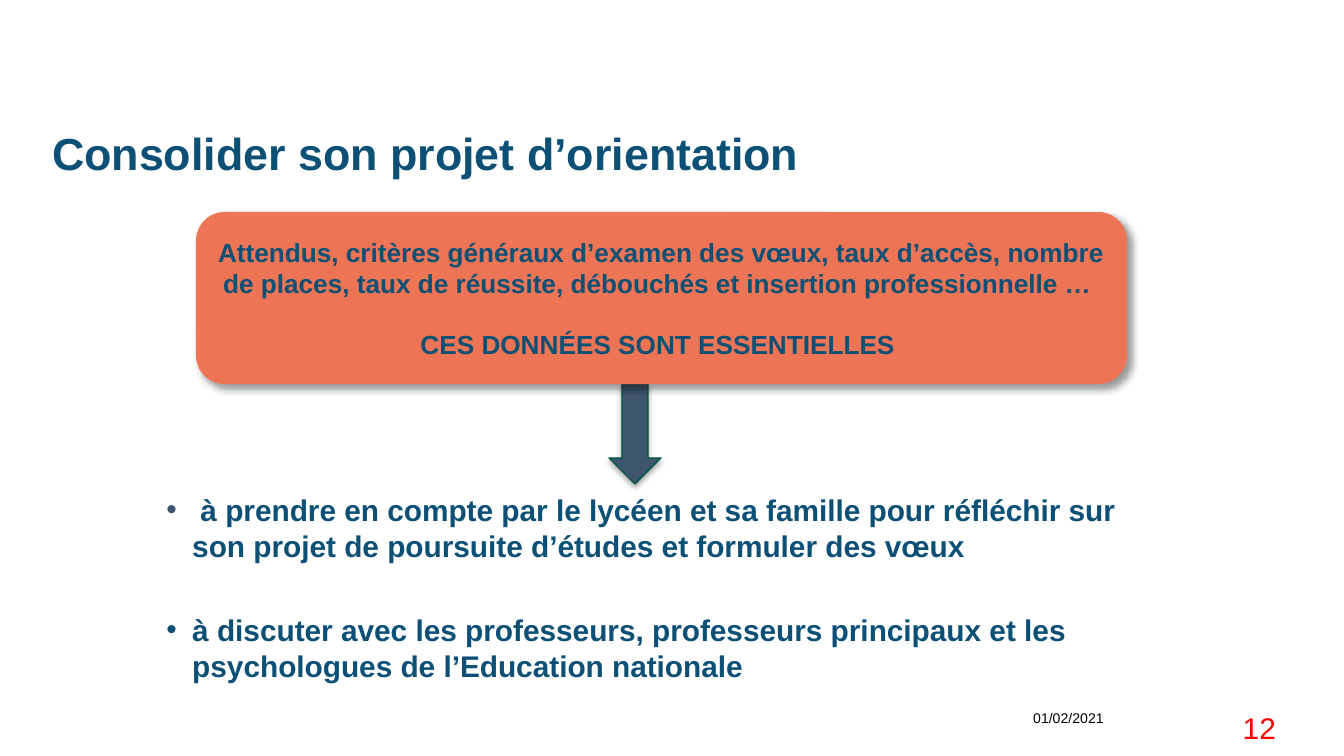
from dataclasses import dataclass

from lxml import etree
from pptx import Presentation, util as u
from pptx.dml.color import RGBColor
from pptx.enum import shapes, text
from pptx.oxml import ns

PX = 914400 / 134.4


@dataclass(frozen=True)
class Theme:
    font: str = "Arial"
    navy: str = "0C5076"
    slate: str = "3D566E"
    green: str = "005640"
    coral: str = "ED7454"
    black: str = "000000"
    red: str = "FF0000"
    title: float = 24
    body: float = 16
    panel: float = 14
    date: float = 7.5


theme = Theme()


def style(font, size, color, bold=False):
    font.name = theme.font
    font.size = u.Pt(size)
    font.bold = bold
    font.color.rgb = RGBColor.from_string(color)


def add_shadow(shape, opacity, blur, distance, degrees):
    shape.shadow.inherit = False
    effects = shape._element.spPr.find(ns.qn("a:effectLst"))
    shadow = etree.SubElement(
        effects, ns.qn("a:outerShdw"), blurRad=str(u.Pt(blur)),
        dist=str(u.Pt(distance)), dir=str(degrees * 60000),
        algn="ctr", rotWithShape="0")
    color = etree.SubElement(shadow, ns.qn("a:srgbClr"), val=theme.black)
    etree.SubElement(color, ns.qn("a:alpha"), val=str(opacity * 1000))


deck = Presentation()
deck.slide_width, deck.slide_height = round(1344 * PX), round(756 * PX)
page = deck.slides.add_slide(deck.slide_layouts[5])

title = page.shapes.title
title.left, title.top, title.width, title.height = [
    round(n * PX) for n in (52, 132, 1238, 106)]
frame = title.text_frame
frame.margin_left = frame.margin_top = frame.margin_right = frame.margin_bottom = 0
frame.vertical_anchor = text.MSO_ANCHOR.TOP
frame.auto_size = text.MSO_AUTO_SIZE.NONE
frame.word_wrap = True
para = frame.paragraphs[0]
para.text = "Consolider son projet d’orientation"
para.alignment = text.PP_ALIGN.LEFT
para.line_spacing = 0.9
style(para.font, theme.title, theme.navy, True)

for left, label, size, color in (
    (945, "01/02/2021", theme.date, theme.black),
    (1117, "12", theme.body, theme.red),
):
    box = page.shapes.add_textbox(*[round(n * PX) for n in (left, 703, 172, 52)])
    box.text_frame.word_wrap = True
    para = box.text_frame.paragraphs[0]
    para.text = label
    para.alignment = text.PP_ALIGN.RIGHT
    style(para.font, size, color)

advice = page.shapes.add_textbox(*[round(n * PX) for n in (153, 485, 1005, 210)])
frame = advice.text_frame
frame.word_wrap = True
for index, (lead, sentence) in enumerate((
    (" ", "à prendre en compte par le lycéen et sa famille pour réfléchir sur "
          "son projet de poursuite d’études et formuler des vœux"),
    ("", "à discuter avec les professeurs, professeurs principaux et les "
         "psychologues de l’Education nationale"),
)):
    para = frame.add_paragraph() if index else frame.paragraphs[0]
    props = para._p.get_or_add_pPr()
    props.set("marL", str(round(26 * PX)))
    props.set("indent", str(round(-26 * PX)))
    etree.SubElement(props, ns.qn("a:buFont"), typeface=theme.font)
    etree.SubElement(props, ns.qn("a:buChar"), char="•")
    if index:
        para.space_before = u.Pt(26)
    style(para.font, theme.body, theme.navy, True)
    if lead:
        span = para.add_run()
        span.text = lead
        style(span.font, theme.body, theme.slate)
    para.add_run().text = sentence

arrow = page.shapes.add_shape(
    shapes.MSO_SHAPE.DOWN_ARROW, *[round(n * PX) for n in (609, 383, 52, 101)])
arrow.fill.solid()
arrow.fill.fore_color.rgb = RGBColor.from_string(theme.slate)
arrow.line.color.rgb = RGBColor.from_string(theme.green)
arrow.line.width = u.Pt(0.75)
add_shadow(arrow, 35, 3.1, 1.8, 90)

panel = page.shapes.add_shape(
    shapes.MSO_SHAPE.ROUNDED_RECTANGLE,
    *[round(n * PX) for n in (196, 212, 931, 172)])
panel.fill.solid()
panel.fill.fore_color.rgb = RGBColor.from_string(theme.coral)
panel.line.fill.background()
add_shadow(panel, 40, 4, 3, 45)
frame = panel.text_frame
frame.word_wrap = True
frame.vertical_anchor = text.MSO_ANCHOR.MIDDLE
for index, sentence in enumerate((
    "Attendus, critères généraux d’examen des vœux, taux d’accès, nombre "
    "de places, taux de réussite, débouchés et insertion professionnelle … ",
    "CES DONNÉES SONT ESSENTIELLES ",
)):
    para = frame.add_paragraph() if index else frame.paragraphs[0]
    para.text = sentence
    para.alignment = text.PP_ALIGN.CENTER
    if index:
        para.space_before = u.Pt(16)
    style(para.font, theme.panel, theme.navy, True)

deck.save("out.pptx")
